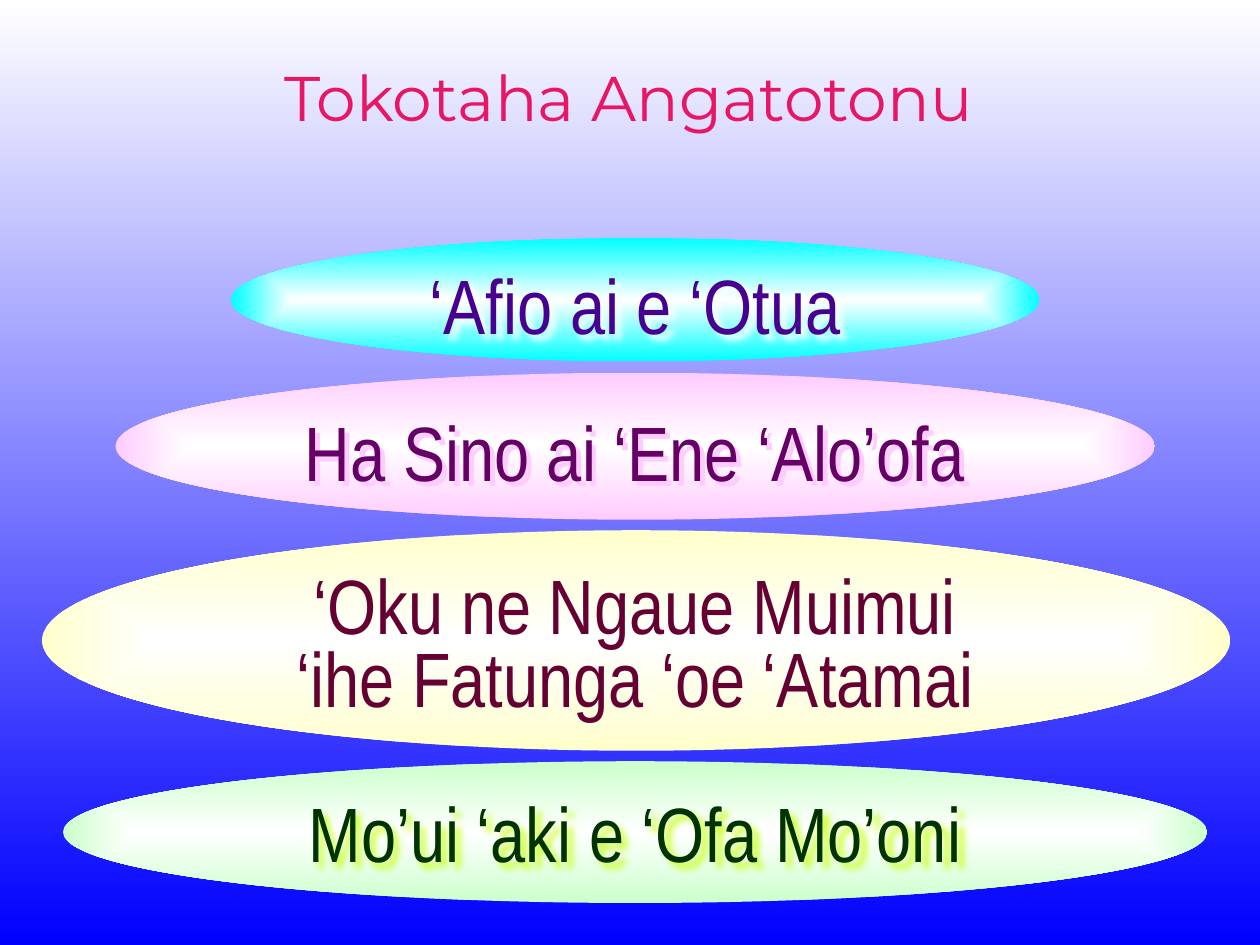
from lxml import etree
from pptx import Presentation
from pptx.dml.color import RGBColor
from pptx.enum import shapes as sh, text as tx
from pptx.oxml import ns, parse_xml
from pptx.util import Pt


def rgb(code):
    return RGBColor.from_string(code)


def blend(fill, start, end):
    fill.gradient()
    for stop, pos, code in zip(fill.gradient_stops, (0, 1), (start, end)):
        stop.position = pos
        stop.color.rgb = rgb(code)


A = 'xmlns:a="http://schemas.openxmlformats.org/drawingml/2006/main"'
PATH = (f'<a:path {A} path="shape"><a:fillToRect l="50000" t="50000" '
        'r="50000" b="50000"/></a:path>')

deck = Presentation()
deck.slide_width, deck.slide_height = Pt(720), Pt(540)
slide = deck.slides.add_slide(deck.slide_layouts[5])

# Background, white at the top to blue
blend(slide.background.fill, "FFFFFF", "0000FF")
slide.background.fill.gradient_angle = 270

# Title
title = slide.shapes.title
title.left, title.top, title.width, title.height = Pt(24), Pt(30), Pt(670), Pt(91)
frame = title.text_frame
frame.text = "Tokotaha Angatotonu"
frame.vertical_anchor = tx.MSO_ANCHOR.TOP
para = frame.paragraphs[0]
para.alignment = tx.PP_ALIGN.CENTER
para.font.size, para.font.name = Pt(36), "Montserrat"
para.font.color.rgb = rgb("E81766")

# Layers: lines, ellipse box, rim colour, text box, text colour,
# line spacing, text shadow (colour, blur in points)
layers = [
    (["‘Afio ai e ‘Otua"], (132, 136, 462, 70.5), "00FFFF",
     (201, 143.5, 324, 60), "480090", 1.0, ("FFFFFF", 4)),
    (["Ha Sino ai ‘Ene ‘Alo’ofa"], (66, 213, 594, 84), "FFCCFF",
     (111, 227.5, 504, 60), "660066", 1.0, ("FFCCFF", 0)),
    (["Mo’ui ‘aki e ‘Ofa Mo’oni"], (36, 435, 654, 81), "CCFFCC",
     (108, 456, 510, 50), "003300", Pt(42), ("CCFF33", 4)),
    (["‘Oku ne Ngaue Muimui", "‘ihe Fatunga ‘oe ‘Atamai"],
     (24, 303, 679, 126), "FFFFCC",
     (99, 325, 528, 93), "660033", 0.8, None),
]

for lines, oval, rim, box, ink, gap, glow in layers:
    group = slide.shapes.add_group_shape()

    # Ellipse, white in the middle
    disc = group.shapes.add_shape(sh.MSO_SHAPE.OVAL, *map(Pt, oval))
    disc.shadow.inherit = False
    disc.line.fill.background()
    blend(disc.fill, "FFFFFF", rim)
    grad = disc._element.spPr.find(ns.qn("a:gradFill"))
    grad.replace(grad.find(ns.qn("a:lin")), parse_xml(PATH))

    # Label
    label = group.shapes.add_textbox(*map(Pt, box))
    frame = label.text_frame
    frame.word_wrap = True
    frame.text = "\n".join(lines)
    for para in frame.paragraphs:
        para.alignment = tx.PP_ALIGN.CENTER
        para.line_spacing = gap
        para.font.size, para.font.name = Pt(44), "Arial Narrow"
        para.font.color.rgb = rgb(ink)

    # Text shadow, down and to the right
    if glow:
        tint, blur = glow
        fx = etree.SubElement(label._element.spPr, ns.qn("a:effectLst"))
        drop = etree.SubElement(fx, ns.qn("a:outerShdw"), blurRad=str(Pt(blur)),
                                dist=str(Pt(4)), dir="2700000")
        etree.SubElement(drop, ns.qn("a:srgbClr"), val=tint)

deck.save("out.pptx")
